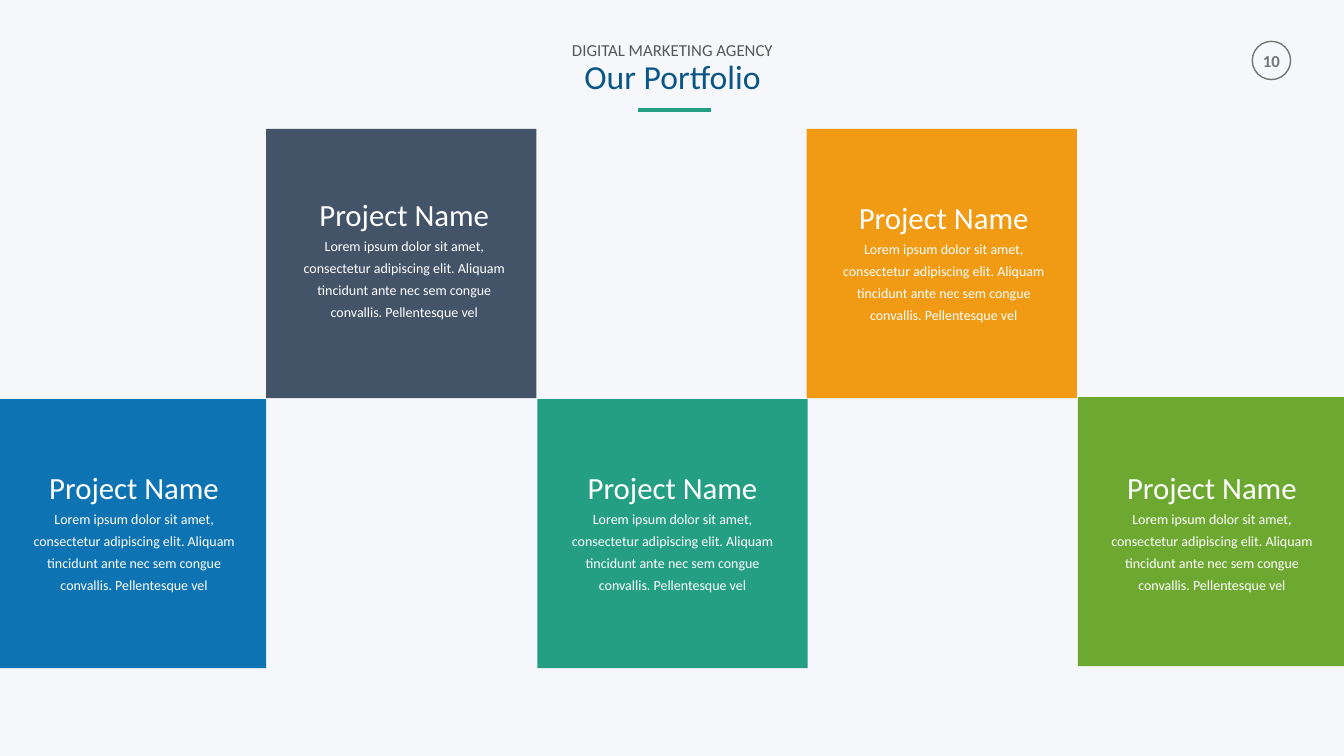
from dataclasses import dataclass

from lxml import etree
from pptx import Presentation
from pptx.dml.color import RGBColor
from pptx.enum.shapes import MSO_CONNECTOR, MSO_SHAPE
from pptx.enum.text import MSO_ANCHOR as Anchor, MSO_AUTO_SIZE as AutoSize, PP_ALIGN as Align
from pptx.oxml.ns import qn
from pptx.util import Inches, Pt


@dataclass(frozen=True)
class Theme:
    font: str = "Calibri"
    background: str = "F6F7FA"
    heading: str = "0A5686"
    kicker: str = "565856"
    badge: str = "737572"
    white: str = "FFFFFF"
    slate: str = "445468"
    orange: str = "F19A14"
    blue: str = "0D73B2"
    green: str = "249F83"
    lime: str = "6DA931"
    heading_size: int = 24
    project_size: int = 22
    small_size: int = 12
    body_size: int = 10


theme = Theme()


def write(paragraph, text, size, color, spacing=1.0, bold=False):
    paragraph.text = text
    paragraph.alignment = Align.CENTER
    paragraph.line_spacing = spacing
    paragraph.space_before = Pt(0)
    font = paragraph.font
    font.name, font.size, font.bold = theme.font, Pt(size), bold
    font.color.rgb = RGBColor.from_string(color)


# Slide and background
deck = Presentation()
deck.slide_width, deck.slide_height = Inches(13.33), Inches(7.5)
slide = deck.slides.add_slide(deck.slide_layouts[5])
slide.background.fill.solid()
slide.background.fill.fore_color.rgb = RGBColor.from_string(theme.background)

# Page number in a ring
ring = slide.shapes.add_shape(MSO_SHAPE.OVAL, Inches(12.42), Inches(0.41), Inches(0.38), Inches(0.38))
ring.shadow.inherit = False
ring.fill.background()
ring.line.color.rgb = RGBColor.from_string(theme.badge)
ring.line.width = Pt(1)
page_number = slide.shapes.add_textbox(Inches(12.41), Inches(0.45), Inches(0.4), Inches(0.3)).text_frame
page_number.word_wrap = False
write(page_number.paragraphs[0], "10", theme.small_size, theme.badge, bold=True)

# Project tiles: left, top, width, colour, then left and top of the caption
tile_height = Inches(2.67)
projects = [
    (-0.04, 3.96, 2.68, theme.blue, 0.13, 4.58),
    (2.64, 1.28, 2.68, theme.slate, 2.81, 1.87),
    (5.33, 3.96, 2.68, theme.green, 5.47, 4.58),
    (8, 1.28, 2.68, theme.orange, 8.16, 1.9),
    (10.69, 3.94, 2.64, theme.lime, 10.82, 4.58),
]
description = (
    "Lorem ipsum dolor sit amet, consectetur adipiscing elit. Aliquam "
    "tincidunt ante nec sem congue convallis. Pellentesque vel"
)
for left, top, width, color, caption_left, caption_top in projects:
    tile = slide.shapes.add_shape(MSO_SHAPE.RECTANGLE, Inches(left), Inches(top), Inches(width), tile_height)
    tile.shadow.inherit = False
    tile.fill.solid()
    tile.fill.fore_color.rgb = RGBColor.from_string(color)
    tile.line.fill.background()

    caption = slide.shapes.add_textbox(
        Inches(caption_left), Inches(caption_top), Inches(2.4), Inches(1.38)
    ).text_frame
    caption.word_wrap = True
    caption.vertical_anchor = Anchor.MIDDLE
    caption.margin_left = caption.margin_right = Inches(0.13)
    caption.margin_top = caption.margin_bottom = Inches(0.07)
    write(caption.paragraphs[0], "Project Name", theme.project_size, theme.white)
    write(caption.add_paragraph(), description, theme.body_size, theme.white, spacing=1.3)

# Title with its kicker
title = slide.shapes.title
title.left, title.top, title.width, title.height = Inches(5.57), Inches(0.37), Inches(2.2), Inches(0.65)
heading = title.text_frame
heading.word_wrap = False
heading.auto_size = AutoSize.NONE
heading.vertical_anchor = Anchor.TOP
write(heading.paragraphs[0], "DIGITAL MARKETING AGENCY", theme.small_size, theme.kicker, spacing=0.9)
write(heading.add_paragraph(), "Our Portfolio", theme.heading_size, theme.heading, spacing=0.9)

# Rule under the title
rule = slide.shapes.add_connector(
    MSO_CONNECTOR.STRAIGHT, Inches(7.05), Inches(1.09), Inches(6.33), Inches(1.09)
)
rule.line.color.rgb = RGBColor.from_string(theme.green)
rule.line.width = Pt(3)
etree.SubElement(rule._element.spPr, qn("a:effectLst"))

deck.save("out.pptx")
